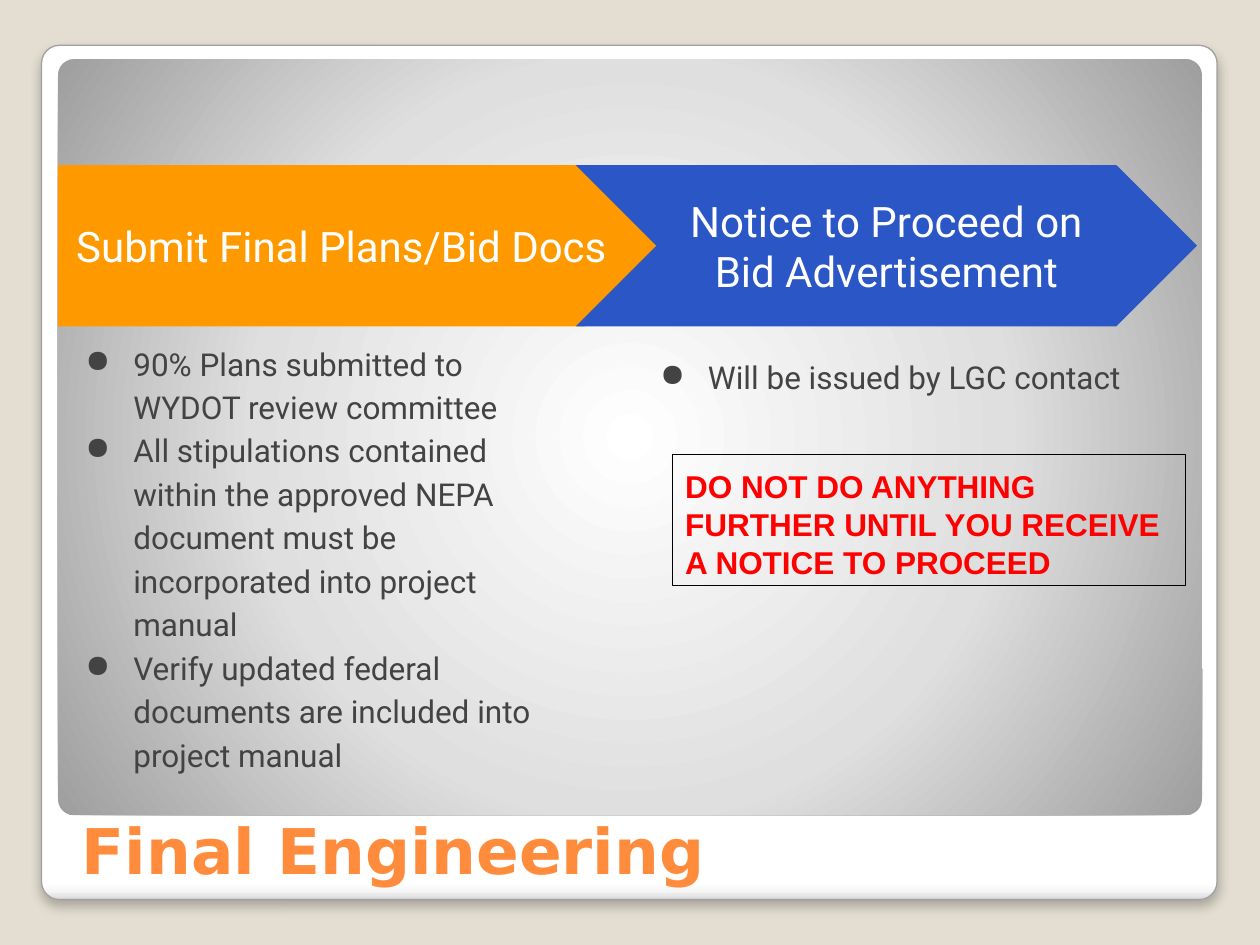
from dataclasses import dataclass
from typing import Optional

from lxml.etree import SubElement
from pptx import Presentation
from pptx.dml.color import RGBColor
from pptx.enum.shapes import MSO_SHAPE
from pptx.enum.text import MSO_ANCHOR, PP_ALIGN
from pptx.oxml.ns import qn
from pptx.util import Inches, Pt

SAND = RGBColor(0xE3, 0xDE, 0xD1)
GRAY = RGBColor(0xA2, 0xA0, 0xA0)
CORAL = RGBColor(0xFF, 0x8C, 0x3C)
ORANGE = RGBColor(0xFF, 0x99, 0x00)
BLUE = RGBColor(0x2A, 0x56, 0xC6)
INK = RGBColor(0x43, 0x43, 0x43)
WHITE = RGBColor(0xFF, 0xFF, 0xFF)
BLACK = RGBColor(0, 0, 0)
RED = RGBColor(0xFF, 0, 0)
SIDES = ("margin_left", "margin_top", "margin_right", "margin_bottom")


@dataclass
class Panel:
    box: tuple
    stops: tuple
    round: bool = False
    edge: Optional[RGBColor] = None


@dataclass
class Block:
    box: tuple
    lines: tuple
    font: dict
    kind: Optional[MSO_SHAPE] = None
    fill: Optional[RGBColor] = None
    edge: Optional[RGBColor] = None
    align: PP_ALIGN = PP_ALIGN.LEFT
    anchor: MSO_ANCHOR = MSO_ANCHOR.TOP
    list: bool = False


HEAD = {"size": Pt(24), "name": "Roboto", "color": WHITE}
BODY = {"size": Pt(18), "name": "Roboto", "color": INK}
ALERT = {"size": Pt(18), "name": "Arial", "bold": True, "color": RED}
TITLE = {"size": Pt(36), "name": "DejaVu Sans", "bold": True, "color": CORAL}
STEP = {"font": HEAD, "align": PP_ALIGN.CENTER, "anchor": MSO_ANCHOR.MIDDLE}

PANELS = (
    Panel((0.33, 0.36, 9.33, 6.78),
          ((0, WHITE), (98, WHITE), (99, RGBColor(0xF6, 0xF6, 0xF6)),
           (100, RGBColor(0xD8, 0xD8, 0xD8))), edge=GRAY),
    Panel((0.46, 0.47, 9.08, 6),
          ((0, WHITE), (55, RGBColor(0xDF, 0xDF, 0xDF)),
           (100, RGBColor(0x9E, 0x9E, 0x9E))), round=True),
)
BLOCKS = (
    Block((0.46, 1.31, 4.82, 1.28), ("Submit Final Plans/Bid Docs",),
          kind=MSO_SHAPE.PENTAGON, fill=ORANGE, **STEP),
    Block((0.46, 2.59, 4.15, 2.86),
          ("90% Plans submitted to WYDOT review committee",
           "All stipulations contained within the approved NEPA document "
           "must be incorporated into project manual",
           "Verify updated federal documents are included into project manual"),
          BODY, list=True),
    Block((4.57, 1.31, 4.93, 1.28), ("Notice to Proceed on Bid Advertisement",),
          kind=MSO_SHAPE.CHEVRON, fill=BLUE, **STEP),
    Block((5.02, 2.7, 4, 2.86), ("Will be issued by LGC contact",), BODY, list=True),
    Block((5.34, 3.61, 4.07, 1.04),
          ("DO NOT DO ANYTHING FURTHER UNTIL YOU RECEIVE A NOTICE TO PROCEED",),
          ALERT, kind=MSO_SHAPE.RECTANGLE, edge=BLACK),
)


def node(root, tag: str, **attrs):
    return SubElement(root, qn(f"a:{tag}"), {k: str(v) for k, v in attrs.items()})


def place(shape, box: tuple) -> None:
    for key, value in zip(("left", "top", "width", "height"), box):
        setattr(shape, key, Inches(value))


def style(font, look: dict) -> None:
    for key, value in look.items():
        if key == "color":
            font.color.rgb = value
        else:
            setattr(font, key, value)


def paint(shape, fill: Optional[RGBColor], edge: Optional[RGBColor]) -> None:
    shape.shadow.inherit = False
    for part, color in ((shape.fill, fill), (shape.line.fill, edge)):
        if color is None:
            part.background()
        else:
            part.solid()
            part.fore_color.rgb = color
    if edge is not None:
        shape.line.width = Pt(0.75)


def blend(shape, panel: Panel) -> None:
    props = shape._element.spPr
    grad = node(props, "gradFill", rotWithShape=1)
    stops = node(grad, "gsLst")
    for pos, color in panel.stops:
        node(node(stops, "gs", pos=pos * 1000), "srgbClr", val=color)
    if panel.round:
        way = node(grad, "path", path="circle")
        node(way, "fillToRect", l=50000, t=50000, r=50000, b=50000)
    else:
        node(grad, "lin", ang=5400000, scaled=0)
    props.replace(props.find(qn("a:noFill")), grad)


def shade(shape) -> None:
    root = shape._element.spPr.find(qn("a:effectLst"))
    drop = node(root, "outerShdw", blurRad=Pt(6), dist=Pt(4), dir=5400000,
                algn="t", rotWithShape=0)
    node(node(drop, "srgbClr", val=BLACK), "alpha", val=25000)


def draw_panel(slide, panel: Panel) -> None:
    shape = slide.shapes.add_shape(
        MSO_SHAPE.ROUNDED_RECTANGLE, *map(Inches, panel.box))
    shape.adjustments[0] = 0.021
    paint(shape, None, panel.edge)
    blend(shape, panel)
    if panel.edge is not None:
        shade(shape)


def bullet(para, color: RGBColor) -> None:
    para.line_spacing = 1.15
    props = para._p.get_or_add_pPr()
    props.set("marL", str(Inches(0.5)))
    props.set("indent", str(Inches(-0.38)))
    node(node(props, "buClr"), "srgbClr", val=color)
    node(props, "buChar", char="●")


def draw_block(slide, block: Block) -> None:
    box = tuple(map(Inches, block.box))
    if block.kind is None:
        shape = slide.shapes.add_textbox(*box)
    else:
        shape = slide.shapes.add_shape(block.kind, *box)
        paint(shape, block.fill, block.edge)
    frame = shape.text_frame
    look = {"word_wrap": True, "vertical_anchor": block.anchor,
            **dict.fromkeys(SIDES, Inches(0.1))}
    for key, value in look.items():
        setattr(frame, key, value)
    frame.text = "\n".join(block.lines)
    for para in frame.paragraphs:
        para.alignment = block.align
        style(para.runs[0].font, block.font)
        if block.list:
            bullet(para, block.font["color"])


def draw_title(slide, text: str) -> None:
    title = slide.shapes.title
    slide.shapes._spTree.append(title._element)
    place(title, (0.55, 5.94, 8.95, 1.15))
    frame = title.text_frame
    frame.text = text
    frame.vertical_anchor = MSO_ANCHOR.BOTTOM
    para = frame.paragraphs[0]
    para.alignment = PP_ALIGN.LEFT
    style(para.runs[0].font, TITLE)


def main() -> None:
    deck = Presentation()
    deck.slide_width, deck.slide_height = Inches(10), Inches(7.5)
    slide = deck.slides.add_slide(deck.slide_layouts[5])
    back = slide.background.fill
    back.solid()
    back.fore_color.rgb = SAND
    for panel in PANELS:
        draw_panel(slide, panel)
    draw_title(slide, "Final Engineering")
    for block in BLOCKS:
        draw_block(slide, block)
    deck.save("out.pptx")


if __name__ == "__main__":
    main()
